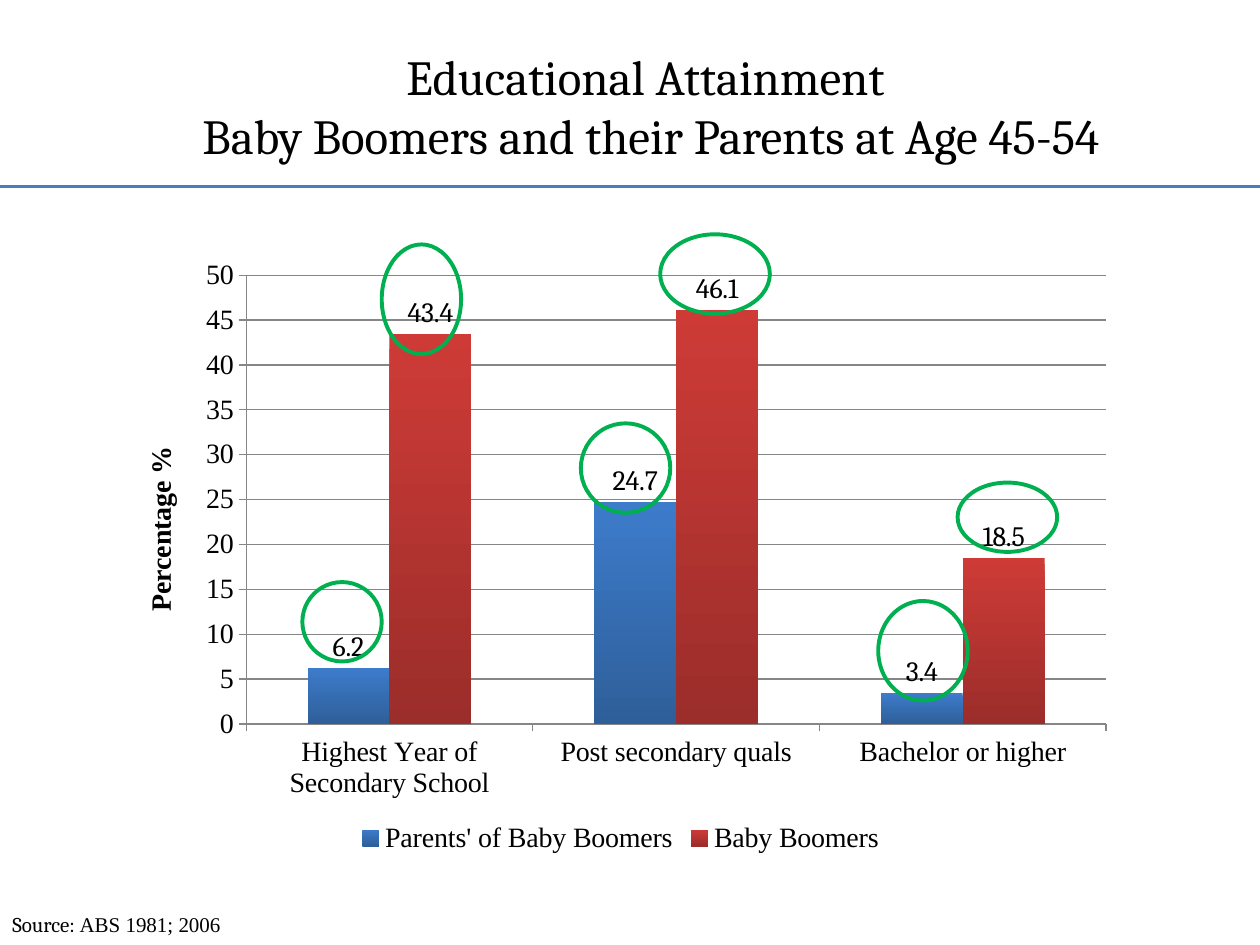
from lxml import etree
from pptx import Presentation
from pptx.chart.data import CategoryChartData
from pptx.dml.color import RGBColor
from pptx.enum.chart import XL_CHART_TYPE, XL_LABEL_POSITION, XL_LEGEND_POSITION, XL_TICK_MARK
from pptx.enum.shapes import MSO_CONNECTOR, MSO_SHAPE
from pptx.enum.text import MSO_ANCHOR, PP_ALIGN
from pptx.oxml import parse_xml
from pptx.oxml.ns import nsdecls, qn
from pptx.util import Inches, Pt

COLUMN = XL_CHART_TYPE.COLUMN_CLUSTERED
OUTSIDE_END = XL_LABEL_POSITION.OUTSIDE_END
BOTTOM = XL_LEGEND_POSITION.BOTTOM
TICK_OUT = XL_TICK_MARK.OUTSIDE
STRAIGHT = MSO_CONNECTOR.STRAIGHT
OVAL = MSO_SHAPE.OVAL
MIDDLE = MSO_ANCHOR.MIDDLE
CENTER = PP_ALIGN.CENTER

COLORS = {"text": "000000", "rule": "4B7EBC", "ring": "00B050", "axis": "868686"}
GRADIENTS = [("3D7BCB", "2E5F99"), ("CE3B37", "9B2D2A")]
HEAD, BODY = "Cambria", "Times New Roman"


def set_font(font, name, size, **values):
    values = {"name": name, "size": Pt(size), **values}
    for key, value in values.items():
        setattr(font, key, value)
    font.color.rgb = RGBColor.from_string(COLORS["text"])


def set_line(line, color, width):
    line.color.rgb = RGBColor.from_string(COLORS[color])
    line.width = Pt(width)


prs = Presentation()
prs.slide_width, prs.slide_height = Inches(10), Inches(7.5)
s = prs.slides.add_slide(prs.slide_layouts[5])

# Title
sp = s.shapes.title
sp.left, sp.top, sp.width, sp.height = [Inches(v) for v in (0.51, 0.21, 9.31, 1.25)]
tf = sp.text_frame
tf.vertical_anchor = MIDDLE
p = tf.paragraphs[0]
p.alignment = CENTER
p.text = "Educational Attainment \vBaby Boomers and their Parents at Age 45-54"
for r in p.runs:
    set_font(r.font, HEAD, 28)

# Rule under the title
rule = s.shapes.add_connector(STRAIGHT, 0, Inches(1.48), Inches(10), Inches(1.48))
set_line(rule.line, "rule", 1.5)
etree.SubElement(rule._element.spPr, qn("a:effectLst"))

# Chart
data = CategoryChartData()
data.categories = ["Highest Year of Secondary School", "Post secondary quals", "Bachelor or higher"]
data.add_series("Parents' of Baby Boomers", (6.2, 24.7, 3.4))
data.add_series("Baby Boomers", (43.4, 46.1, 18.5))
chart = s.shapes.add_chart(COLUMN, Inches(0.91), Inches(1.94), Inches(8.03), Inches(4.88), data).chart
set_font(chart.font, HEAD, 10)
chart.has_title = False
chart.has_legend = True
chart.legend.position = BOTTOM
chart.legend.include_in_layout = False
set_font(chart.legend.font, BODY, 16)

# Axes
for axis in (chart.category_axis, chart.value_axis):
    axis.major_tick_mark = TICK_OUT
    set_font(axis.tick_labels.font, BODY, 16)
    set_line(axis.format.line, "axis", 0.75)
axis = chart.value_axis
axis.minimum_scale, axis.maximum_scale, axis.major_unit = 0, 50, 5
axis.has_major_gridlines = True
set_line(axis.major_gridlines.format.line, "axis", 0.75)
tf = axis.axis_title.text_frame
tf.text = "Percentage %"
set_font(tf.paragraphs[0].runs[0].font, BODY, 16, bold=True)

# Columns and value labels
plot = chart.plots[0]
plot.gap_width, plot.overlap, plot.vary_by_categories = 150, 0, False
for series, shades in zip(plot.series, GRADIENTS):
    fill = series.format.fill
    fill.gradient()
    fill.gradient_angle = 270
    for stop, shade in zip(fill.gradient_stops, shades):
        stop.color.rgb = RGBColor.from_string(shade)
    labels = series.data_labels
    labels.show_value = True
    labels.position = OUTSIDE_END
    set_font(labels.font, HEAD, 16)

# Fixed inner plot area
area = plot._element.getparent()
for layout in area.findall(qn("c:layout")):
    area.remove(layout)
sizes = {"x": 0.13, "y": 0.05, "w": 0.85, "h": 0.73}
modes = "".join(f'<c:{k}Mode val="edge"/>' for k in "xy")
values = "".join(f'<c:{k} val="{v}"/>' for k, v in sizes.items())
area.insert(0, parse_xml(
    f'<c:layout {nsdecls("c")}><c:manualLayout><c:layoutTarget val="inner"/>'
    f"{modes}{values}</c:manualLayout></c:layout>"))

# Source note
tf = s.shapes.add_textbox(0, Inches(7.1), Inches(3.62), Inches(0.4)).text_frame
tf.word_wrap = True
p = tf.paragraphs[0]
for text, name, size in [("Source: ", HEAD, 12), ("ABS 1981; 2006", BODY, 12), (" ", HEAD, 18)]:
    r = p.add_run()
    r.text = text
    set_font(r.font, name, size)

# Rings around the values
RINGS = [
    (3.03, 1.94, 0.63, 0.87),
    (2.4, 4.62, 0.63, 0.63),
    (4.61, 3.36, 0.71, 0.71),
    (5.24, 1.86, 0.87, 0.63),
    (7.6, 3.83, 0.79, 0.55),
    (6.97, 4.77, 0.71, 0.79),
]
for box in RINGS:
    sp = s.shapes.add_shape(OVAL, *[Inches(v) for v in box])
    sp.shadow.inherit = False
    sp.fill.background()
    set_line(sp.line, "ring", 2.25)

prs.save("out.pptx")
